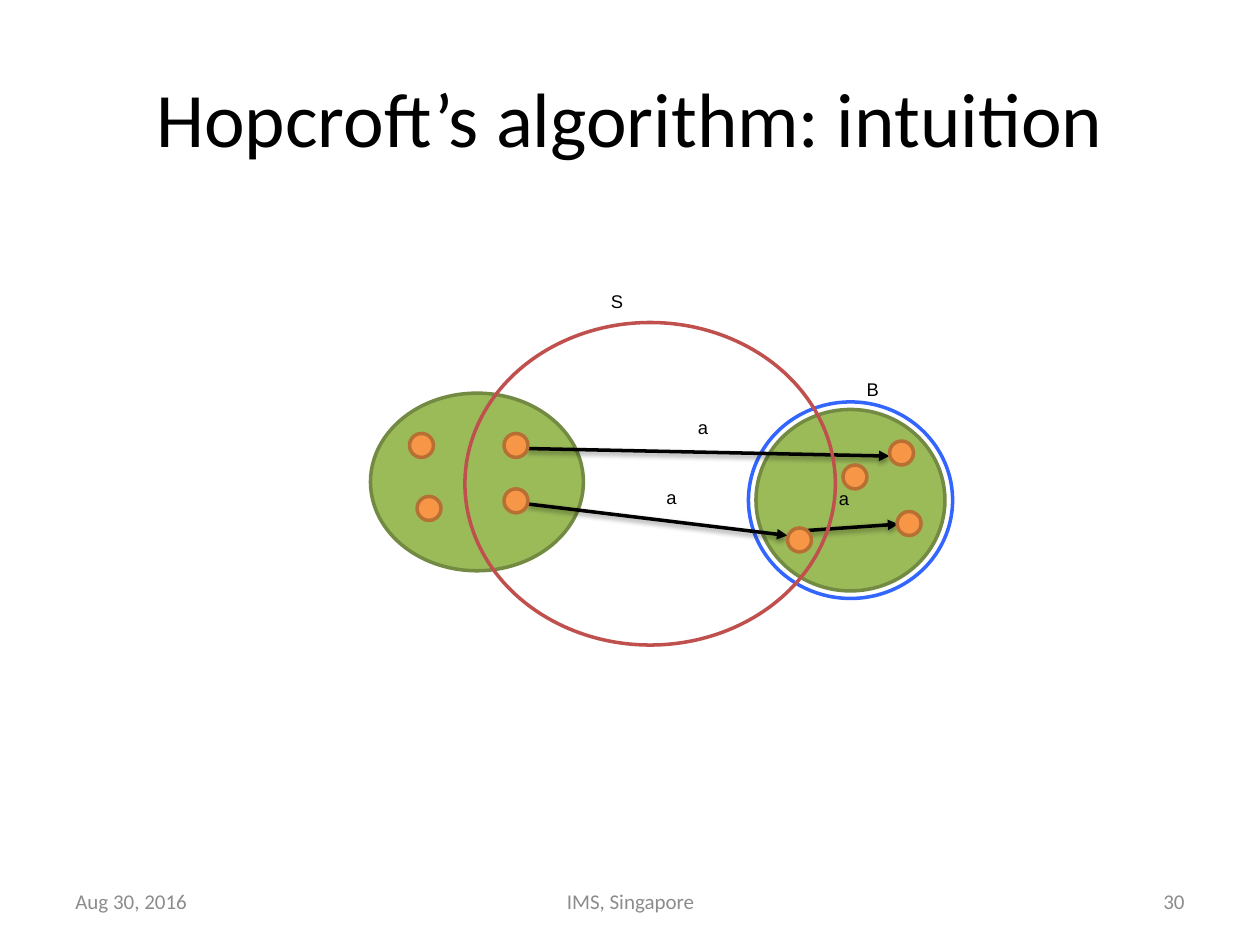
from dataclasses import dataclass

from lxml.etree import SubElement
from pptx import Presentation
from pptx.dml.color import RGBColor
from pptx.enum.shapes import MSO_CONNECTOR as Connector, MSO_SHAPE as Shape
from pptx.enum.text import MSO_ANCHOR as Anchor, PP_ALIGN as Align
from pptx.oxml.ns import qn
from pptx.util import Inches, Pt


@dataclass(frozen=True)
class Theme:
    """Colours, fonts and sizes of the slide."""
    ink: str = "000000"
    muted: str = "8C8C8C"
    paper: str = "FFFFFF"
    block: str = "9BBB59"
    block_edge: str = "738A42"
    state: str = "F79646"
    state_edge: str = "B76F34"
    splitter: str = "3366FF"
    preimage: str = "C0504D"
    heading_font: str = "Calibri"
    label_font: str = "Arial"
    title_size: float = 44
    label_size: float = 10.5
    footer_size: float = 12
    stroke: float = 2
    state_size: float = 0.19


THEME = Theme()


def add_text(slide, words, box, size, font, color, align=Align.LEFT,
             anchor=Anchor.TOP, wrap=True):
    """Add one line of text in a box."""
    frame = slide.shapes.add_textbox(*map(Inches, box)).text_frame
    frame.word_wrap = wrap
    frame.vertical_anchor = anchor
    line = frame.paragraphs[0]
    line.text = words
    line.alignment = align
    line.font.size = Pt(size)
    line.font.name = font
    line.font.color.rgb = RGBColor.from_string(color)


def add_label(slide, words, left, top, width, wrap=True):
    """Add a small label that names a set or a transition."""
    add_text(slide, words, (left, top, width, 0.28), THEME.label_size,
             THEME.label_font, THEME.ink, wrap=wrap)


def add_footer(slide, words, left, width, align):
    """Add one part of the footer."""
    add_text(slide, words, (left, 6.95, width, 0.4), THEME.footer_size,
             THEME.heading_font, THEME.muted, align, Anchor.MIDDLE)


def add_ellipse(slide, box, edge, fill=None):
    """Add an outlined ellipse, hollow unless a fill is given."""
    ellipse = slide.shapes.add_shape(Shape.OVAL, *map(Inches, box))
    ellipse.shadow.inherit = False
    if fill:
        ellipse.fill.solid()
        ellipse.fill.fore_color.rgb = RGBColor.from_string(fill)
    else:
        ellipse.fill.background()
    ellipse.line.color.rgb = RGBColor.from_string(edge)
    ellipse.line.width = Pt(THEME.stroke)


def add_state(slide, left, top):
    """Add an automaton state."""
    add_ellipse(slide, (left, top, THEME.state_size, THEME.state_size),
                THEME.state_edge, THEME.state)


def add_transition(slide, start, end):
    """Add an arrow with a soft shadow below it."""
    arrow = slide.shapes.add_connector(
        Connector.STRAIGHT, *map(Inches, (*start, *end)))
    arrow.line.color.rgb = RGBColor.from_string(THEME.ink)
    arrow.line.width = Pt(THEME.stroke)
    properties = arrow._element.spPr
    SubElement(properties.find(qn("a:ln")), qn("a:tailEnd"), type="triangle")
    effects = SubElement(properties, qn("a:effectLst"))
    shadow = SubElement(effects, qn("a:outerShdw"), blurRad=str(Pt(3.1)),
                        dist=str(Pt(1.6)), dir="5400000", rotWithShape="0")
    tint = SubElement(shadow, qn("a:srgbClr"), val=THEME.ink)
    SubElement(tint, qn("a:alpha"), val="38000")


def main():
    """Build the slide and save it."""
    deck = Presentation()
    deck.slide_width, deck.slide_height = Inches(10), Inches(7.5)
    slide = deck.slides.add_slide(deck.slide_layouts[6])

    add_text(slide, "Hopcroft’s algorithm: intuition", (0.5, 0.3, 9, 1.25),
             THEME.title_size, THEME.heading_font, THEME.ink,
             Align.CENTER, Anchor.MIDDLE)

    add_ellipse(slide, (5.94, 3.19, 1.62, 1.56), THEME.splitter, THEME.paper)
    for block in ((6, 3.25, 1.5, 1.44), (2.94, 3.12, 1.69, 1.41)):
        add_ellipse(slide, block, THEME.block_edge, THEME.block)

    for start, end in (((4.19, 3.56), (7.06, 3.62)),
                       ((6.41, 4.21), (7.13, 4.16)),
                       ((4.19, 4), (6.25, 4.25))):
        add_transition(slide, start, end)
    for left, top in ((6.56, 3.82), (5.44, 3.25), (5.19, 3.81)):
        add_label(slide, "a", left, top, 0.56)

    add_ellipse(slide, (3.69, 2.56, 2.94, 2.56), THEME.preimage)
    add_label(slide, "B", 6.78, 2.95, 0.25 + 0.05)
    add_label(slide, "S", 4.75, 2.25, 0.3, wrap=False)

    for left, top in ((4, 3.44), (4, 3.88), (6.25, 4.19), (7.12, 4.06),
                      (7.06, 3.5), (6.69, 3.69), (3.25, 3.44), (3.31, 3.94)):
        add_state(slide, left, top)

    add_footer(slide, "Aug 30, 2016", 0.5, 2.33, Align.LEFT)
    add_footer(slide, "IMS, Singapore", 3.42, 3.17, Align.CENTER)
    add_footer(slide, "30", 7.17, 2.33, Align.RIGHT)

    deck.save("out.pptx")


if __name__ == "__main__":
    main()
